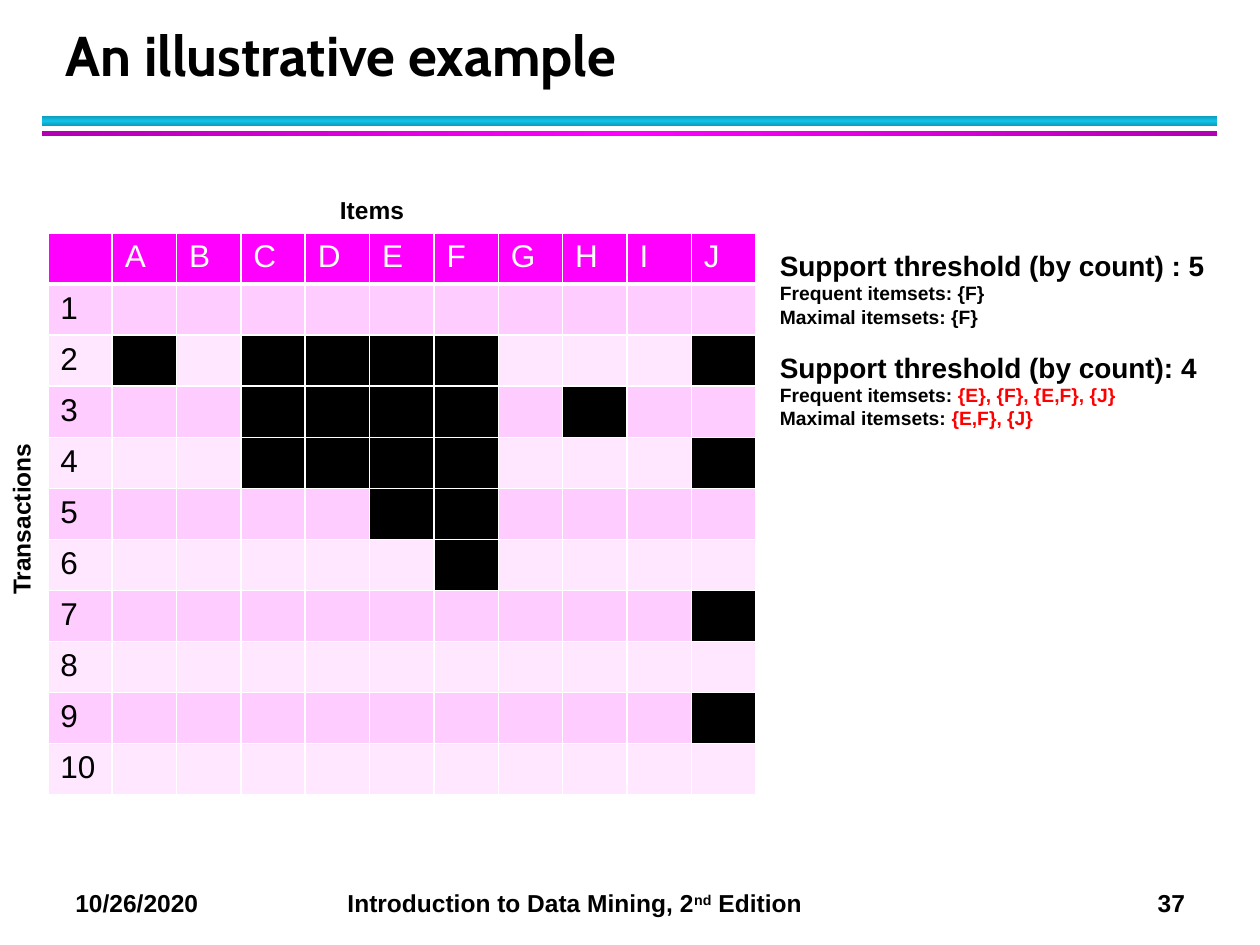
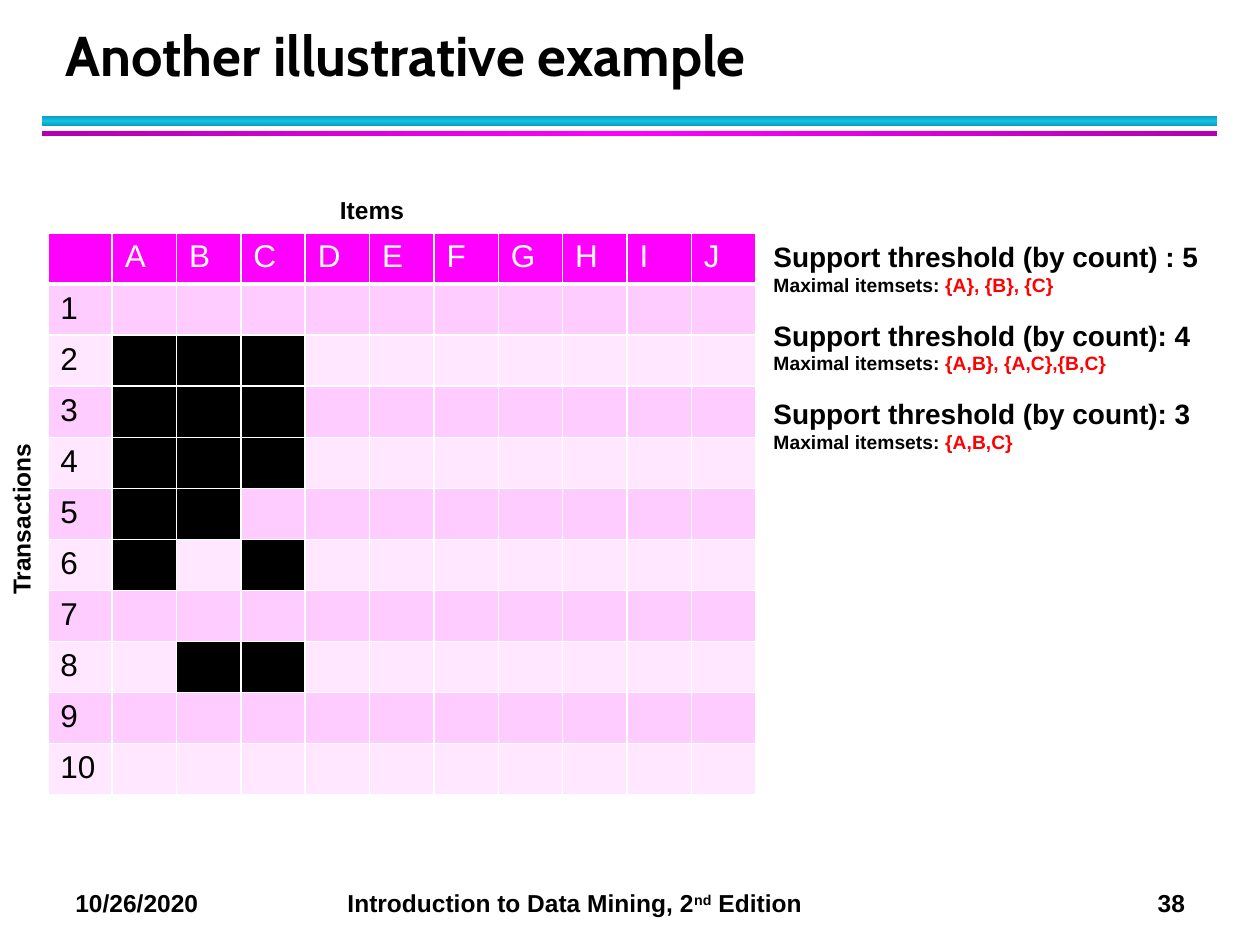
import pptx
import pptx.dml.color
import pptx.enum.shapes
import pptx.enum.text
import pptx.oxml
import pptx.oxml.ns
import pptx.util
from pptx.util import Inches

COLORS = {
    "text": "000000", "answer": "FF0000", "header_text": "FFFFFF", "border": "FFFFFF",
    "header": "FF00FF", "odd_row": "FFCCFF", "even_row": "FFE7FF", "present": "000000",
    "cyan": "12C2E9", "cyan_dark": "0E9BBA", "magenta": "FF00FF", "magenta_dark": "B200B2",
}
BODY_FONT, TITLE_FONT = "Arial", "Cabin"

# top, height, edge colour, middle colour, gradient angle
BANDS = [(0.92, 0.08, "cyan_dark", "cyan", 90), (1.04, 0.04, "magenta_dark", "magenta", 0)]
FOOTER_DATE, FOOTER_BOOK = "10/26/2020", ("Introduction to Data Mining, 2", "nd", " Edition")
FOOTER_TABS = (2.16, 8.59)

ITEMS = "ABCDEFGHIJ"
TRANSACTION_COUNT = 10

# "present" maps each transaction to its items; a threshold has a heading, the
# colour of its itemsets, and (label, itemsets) lines.
SLIDES = [
    {
        "title": "An illustrative example",
        "number": 37,
        "present": {2: "ACDEFJ", 3: "CDEFH", 4: "CDEFJ", 5: "EF", 6: "F", 7: "J", 9: "J"},
        "box": (6.09, 1.92, 3.62, 1.75),
        "thresholds": [
            ("Support threshold (by count) : 5", "text",
             [("Frequent itemsets: ", "{F}"), ("Maximal itemsets: ", "{F}")]),
            ("Support threshold (by count): 4", "answer",
             [("Frequent itemsets: ", "{E}, {F}, {E,F}, {J}"),
              ("Maximal itemsets: ", "{E,F}, {J}")]),
        ],
    },
    {
        "title": "Another illustrative example",
        "number": 38,
        "present": {2: "ABC", 3: "ABC", 4: "ABC", 5: "AB", 6: "AC", 8: "BC"},
        "box": (6.04, 1.85, 3.62, 1.85),
        "thresholds": [
            ("Support threshold (by count) : 5", "answer",
             [("Maximal itemsets: ", "{A}, {B}, {C}")]),
            ("Support threshold (by count): 4", "answer",
             [("Maximal itemsets: ", "{A,B}, {A,C},{B,C}")]),
            ("Support threshold (by count): 3", "answer",
             [("Maximal itemsets: ", "{A,B,C}")]),
        ],
    },
]


def rgb(name):
    return pptx.dml.color.RGBColor.from_string(COLORS[name])


def add_run(p, text, size, color="text", bold=True, font=BODY_FONT):
    r = p.add_run()
    r.text = text
    r.font.size = pptx.util.Pt(size)
    r.font.name = font
    r.font.bold = bold
    r.font.color.rgb = rgb(color)
    return r


def add_text_box(s, box, wrap=False):
    sp = s.shapes.add_textbox(*map(Inches, box))
    sp.text_frame.word_wrap = wrap
    sp.text_frame.auto_size = pptx.enum.text.MSO_AUTO_SIZE.SHAPE_TO_FIT_TEXT
    return sp


def add_band(s, top, height, edge, middle, angle):
    sp = s.shapes.add_shape(pptx.enum.shapes.MSO_SHAPE.RECTANGLE,
                            Inches(0.33), Inches(top), Inches(9.33), Inches(height))
    sp.shadow.inherit = False
    sp.line.fill.background()
    stops = "".join(f'<a:gs pos="{pos}"><a:srgbClr val="{COLORS[c]}"/></a:gs>'
                    for pos, c in ((0, edge), (50000, middle), (100000, edge)))
    geometry = sp._element.spPr.find(pptx.oxml.ns.qn("a:prstGeom"))
    geometry.addnext(pptx.oxml.parse_xml(
        f'<a:gradFill {pptx.oxml.ns.nsdecls("a")}><a:gsLst>{stops}</a:gsLst>'
        f'<a:lin ang="{angle * 60000}" scaled="0"/></a:gradFill>'))


def add_footer(s, number):
    p = add_text_box(s, (0.5, 7, 9.33, 0.34), wrap=True).text_frame.paragraphs[0]
    tabs = "".join(f'<a:tab pos="{Inches(t)}" algn="l"/>' for t in FOOTER_TABS)
    p._p.get_or_add_pPr().append(pptx.oxml.parse_xml(
        f'<a:tabLst {pptx.oxml.ns.nsdecls("a")}>{tabs}</a:tabLst>'))
    book, ordinal, edition = FOOTER_BOOK
    add_run(p, f"{FOOTER_DATE}\t{book}", 14)
    add_run(p, ordinal, 14)._r.get_or_add_rPr().set("baseline", "30000")
    add_run(p, f"{edition}\t{number}", 14)


def format_title(s, text):
    sp = s.shapes.title
    sp.left, sp.top, sp.width, sp.height = map(Inches, (0.42, 0.17, 9.06, 0.58))
    tf = sp.text_frame
    tf.auto_size = pptx.enum.text.MSO_AUTO_SIZE.NONE
    tf.vertical_anchor = pptx.enum.text.MSO_ANCHOR.BOTTOM
    p = tf.paragraphs[0]
    p.alignment = pptx.enum.text.PP_ALIGN.LEFT
    p.line_spacing = pptx.util.Pt(36)
    add_run(p, text, 32, font=TITLE_FONT)


def style_cell(cell, fill, bottom_width):
    cell.fill.solid()
    cell.fill.fore_color.rgb = rgb(fill)
    widths = {"lnL": 1, "lnR": 1, "lnT": 1, "lnB": bottom_width}
    for i, (side, width) in enumerate(widths.items()):
        cell._tc.get_or_add_tcPr().insert(i, pptx.oxml.parse_xml(
            f'<a:{side} {pptx.oxml.ns.nsdecls("a")} w="{pptx.util.Pt(width)}"><a:solidFill>'
            f'<a:srgbClr val="{COLORS["border"]}"/></a:solidFill></a:{side}>'))


def add_transaction_table(s, present):
    rows, cols = TRANSACTION_COUNT + 1, len(ITEMS) + 1
    table = s.shapes.add_table(rows, cols, Inches(0.38), Inches(1.85),
                               Inches(5.62), Inches(4.46)).table
    for row in range(rows):
        band = "header" if row == 0 else "odd_row" if row % 2 else "even_row"
        for col in range(cols):
            cell = table.cell(row, col)
            filled = col > 0 and ITEMS[col - 1] in present.get(row, "")
            style_cell(cell, "present" if filled else band, 1 if row else 3)
            p = cell.text_frame.paragraphs[0]
            if row == 0 and col > 0:
                add_run(p, ITEMS[col - 1], 18, "header_text", bold=False)
            elif row > 0 and col == 0:
                add_run(p, str(row), 18, bold=False)


def add_axis_labels(s):
    for text, box, rotation in (("Items", (2.6, 1.5, 0.77, 0.4), 0),
                                ("Transactions", (-0.54, 3.88, 1.48, 0.4), 270)):
        sp = add_text_box(s, box)
        sp.rotation = rotation
        add_run(sp.text_frame.paragraphs[0], text, 14)


def add_thresholds(s, box, thresholds):
    tf = add_text_box(s, box).text_frame
    for i, (heading, color, lines) in enumerate(thresholds):
        p = tf.add_paragraph() if i else tf.paragraphs[0]
        if i:
            p.space_before = pptx.util.Pt(12.6)
        add_run(p, heading, 16)
        for label, itemsets in lines:
            p = tf.add_paragraph()
            add_run(p, label, 11)
            add_run(p, itemsets, 11, color)


def main():
    prs = pptx.Presentation()
    prs.slide_width, prs.slide_height = Inches(10), Inches(7.5)
    for content in SLIDES:
        s = prs.slides.add_slide(prs.slide_layouts[5])
        for band in BANDS:
            add_band(s, *band)
        add_footer(s, content["number"])
        format_title(s, content["title"])
        add_thresholds(s, content["box"], content["thresholds"])
        add_transaction_table(s, content["present"])
        add_axis_labels(s)
    prs.save("out.pptx")


if __name__ == "__main__":
    main()
